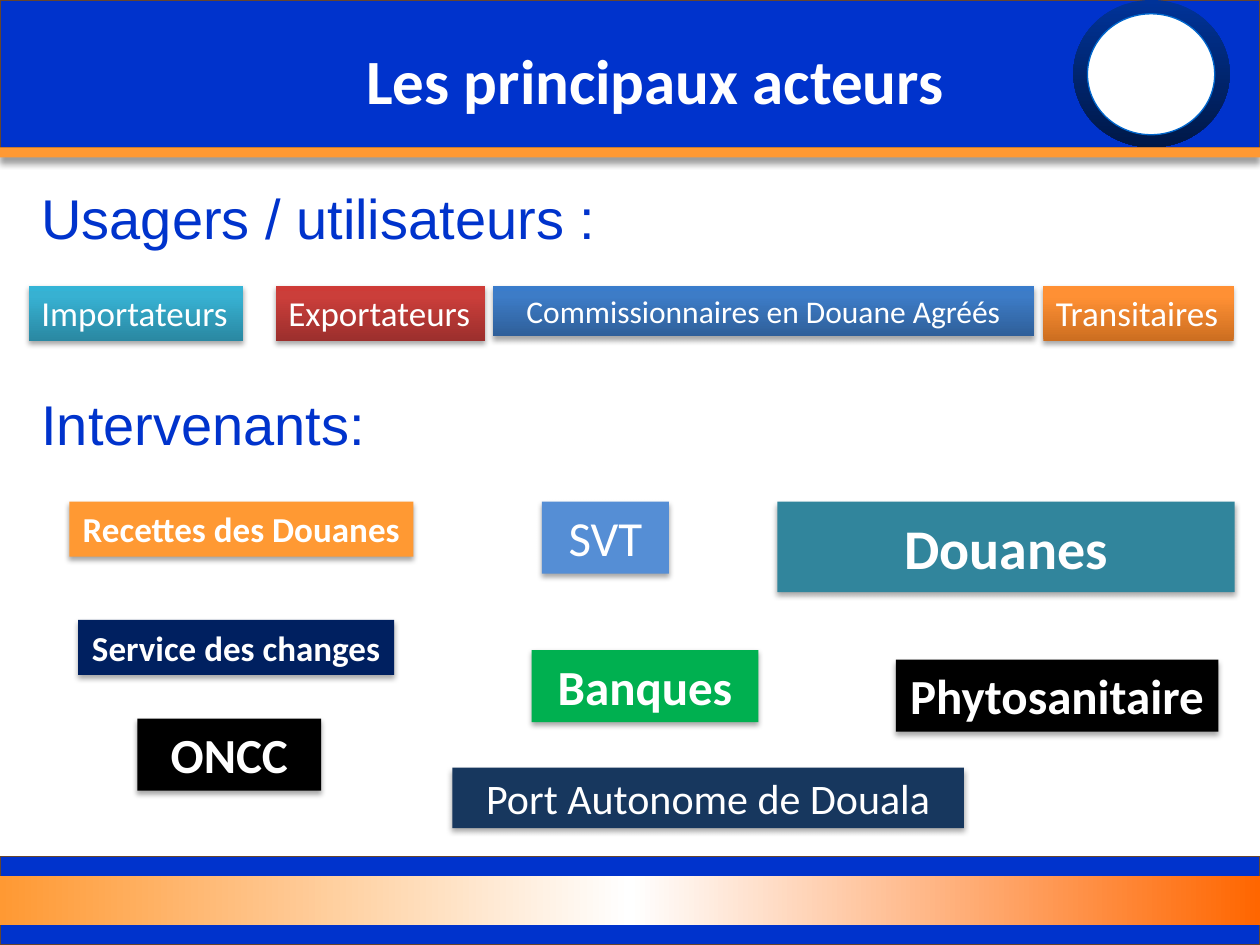
import copy
from dataclasses import dataclass

import pptx
import pptx.dml.color
import pptx.enum.shapes
import pptx.enum.text
import pptx.oxml
import pptx.oxml.ns
import pptx.util

Pt = pptx.util.Pt
RGB = pptx.dml.color.RGBColor.from_string
SHAPES = pptx.enum.shapes.MSO_SHAPE
ALIGN = pptx.enum.text.PP_ALIGN
ANCHOR = pptx.enum.text.MSO_ANCHOR
AUTOSIZE = pptx.enum.text.MSO_AUTO_SIZE


@dataclass(frozen=True)
class Theme:
    blue: str = "0033CC"
    orange: str = "FF9933"
    white: str = "FFFFFF"
    black: str = "000000"
    brown: str = "67452D"
    ring_edge: str = "0066CC"
    sky: str = "558ED5"
    green: str = "00B050"
    navy: str = "17375E"
    teal: str = "31859C"
    midnight: str = "002060"
    ribbon: tuple = ((0, "FF9933"), (50, "FFFFFF"), (100, "FF6600"))
    ring: tuple = ((0, "003399"), (100, "001847"))
    turquoise_fade: tuple = ((0, "2A88A2"), (80, "37B1D2"), (100, "34B4D6"))
    red_fade: tuple = ((0, "9C2F2D"), (80, "CB3E3A"), (100, "CE3B37"))
    blue_fade: tuple = ((0, "2F5F99"), (80, "3D7CC7"), (100, "3A7CCB"))
    orange_fade: tuple = ((0, "CC6E20"), (80, "FF9034"), (100, "FF9136"))
    body_font: str = "Calibri"
    heading_font: str = "Arial"
    title_size: int = 36
    heading_size: int = 32
    huge: int = 32
    large: int = 28
    medium: int = 24
    small: int = 20
    tiny: int = 18
    label_shadow: tuple = (35, 3.1, 1.8)
    header_shadow: tuple = (40, 4, 3)


class Deck:
    def __init__(self, theme, width, height):
        self.theme = theme
        self.presentation = pptx.Presentation()
        self.presentation.slide_width = Pt(width)
        self.presentation.slide_height = Pt(height)
        self.slide = self.presentation.slides.add_slide(self.presentation.slide_layouts[5])

    def fade(self, shape, stops, angle):
        shape.fill.gradient()
        stop_list = shape._element.spPr.find(".//" + pptx.oxml.ns.qn("a:gsLst"))
        for _ in stops[2:]:
            stop_list.append(copy.deepcopy(stop_list[0]))
        for stop, (position, color) in zip(shape.fill.gradient_stops, stops):
            stop.color.rgb = RGB(color)
            stop.position = position / 100
        shape.fill.gradient_angle = angle

    def shade(self, shape, opacity, blur, distance):
        effects = shape._element.spPr.find(pptx.oxml.ns.qn("a:effectLst"))
        effects.append(pptx.oxml.parse_xml(
            f'<a:outerShdw {pptx.oxml.ns.nsdecls("a")} blurRad="{Pt(blur)}" '
            f'dist="{Pt(distance)}" dir="5400000" rotWithShape="0">'
            f'<a:srgbClr val="{self.theme.black}"><a:alpha val="{opacity * 1000}"/>'
            '</a:srgbClr></a:outerShdw>'))

    def panel(self, left, top, width, height, fill, line=None, angle=0,
              shadow=None, kind=SHAPES.RECTANGLE, parent=None):
        shapes = (parent or self.slide).shapes
        shape = shapes.add_shape(kind, Pt(left), Pt(top), Pt(width), Pt(height))
        if isinstance(fill, str):
            shape.fill.solid()
            shape.fill.fore_color.rgb = RGB(fill)
        else:
            self.fade(shape, fill, angle)
        if line:
            shape.line.color.rgb = RGB(line)
            shape.line.width = Pt(0.75)
        else:
            shape.line.fill.background()
        shape.shadow.inherit = False
        if shadow:
            self.shade(shape, *shadow)
        return shape

    def set_text(self, shape, text, size, font, color, bold=False,
                 align=ALIGN.CENTER, anchor=ANCHOR.MIDDLE, wrap=True, grow=False):
        frame = shape.text_frame
        frame.text = text
        frame.word_wrap = wrap
        frame.vertical_anchor = anchor
        frame.auto_size = AUTOSIZE.SHAPE_TO_FIT_TEXT if grow else AUTOSIZE.NONE
        paragraph = frame.paragraphs[0]
        paragraph.alignment = align
        paragraph.font.size = Pt(size)
        paragraph.font.name = font
        paragraph.font.bold = bold
        paragraph.font.color.rgb = RGB(color)

    def title(self, text, left, top, width, height):
        title = self.slide.shapes.title
        self.slide.shapes._spTree.append(title._element)
        title.left, title.top = Pt(left), Pt(top)
        title.width, title.height = Pt(width), Pt(height)
        self.set_text(title, text, self.theme.title_size, self.theme.body_font,
                      self.theme.white, bold=True)

    def heading(self, text, left, top, width, height):
        heading = self.slide.shapes.add_textbox(Pt(left), Pt(top), Pt(width), Pt(height))
        self.set_text(heading, text, self.theme.heading_size, self.theme.heading_font,
                      self.theme.blue, align=ALIGN.LEFT)

    def label(self, text, left, top, width, fill, size, bold=False,
              wrap=False, align=ALIGN.CENTER):
        theme = self.theme
        heights = {theme.huge: 51.8, theme.large: 41.2, theme.medium: 34.6,
                   theme.small: 31.5, theme.tiny: 29.1}
        grow = size not in (theme.huge, theme.medium)
        label = self.panel(left, top, width, heights[size], fill, angle=90,
                           shadow=theme.label_shadow)
        self.set_text(label, text, size, theme.body_font, theme.white, bold, align,
                      ANCHOR.TOP if grow else ANCHOR.MIDDLE, wrap, grow)


def main():
    theme = Theme()
    width, height = 720, 540
    deck = Deck(theme, width, height)

    deck.panel(0, 489.6, width, 50.4, theme.blue, theme.brown)
    deck.panel(0, 500.4, width, 28.1, theme.ribbon)
    deck.panel(0, 0, width, 84.2, theme.blue, theme.brown)
    emblem = deck.slide.shapes.add_group_shape()
    deck.panel(613.4, 0, 89.3, 84.2, theme.ring, angle=270,
               kind=SHAPES.OVAL, parent=emblem)
    deck.panel(621.4, 7.9, 72.7, 69.1, theme.white, theme.ring_edge,
               kind=SHAPES.OVAL, parent=emblem)
    deck.panel(0, 84.2, width, 5.8, theme.orange, shadow=theme.header_shadow)
    deck.title("Les principaux acteurs", 129.6, 11.5, 489.6, 67.7)

    deck.heading("Usagers / utilisateurs :", 16.6, 101.5, 393.8, 44.6)
    users_top = 163.2
    for text, left, label_width, fill in (
        ("Importateurs", 16.6, 122.4, theme.turquoise_fade),
        ("Exportateurs", 157.7, 119.5, theme.red_fade),
        ("Transitaires", 596.2, 108.7, theme.orange_fade),
    ):
        deck.label(text, left, users_top, label_width, fill, theme.small, align=ALIGN.LEFT)
    deck.label("Commissionnaires en Douane Agréés", 281.5, users_top, 309.6,
               theme.blue_fade, theme.tiny, wrap=True)

    deck.heading("Intervenants:", 16.6, 219.6, 393.8, 44.6)
    first_row = 286.6
    for text, left, top, label_width, fill, size, bold, wrap in (
        ("SVT", 309.6, first_row, 72.7, theme.sky, theme.large, False, True),
        ("Recettes des Douanes", 39.6, first_row, 196.6, theme.orange, theme.small, True, True),
        ("Phytosanitaire", 511.9, 376.9, 184.3, theme.black, theme.large, True, False),
        ("Banques", 303.8, 371.5, 129.6, theme.green, theme.large, True, True),
        ("Port Autonome de Douala", 258.5, 438.6, 292.3, theme.navy, theme.medium, False, False),
        ("Douanes", 444.2, first_row, 261.4, theme.teal, theme.huge, True, False),
        ("ONCC", 78.5, 410.6, 105.1, theme.black, theme.large, True, True),
        ("Service des changes", 44.6, 354.2, 180.7, theme.midnight, theme.small, True, False),
    ):
        deck.label(text, left, top, label_width, fill, size, bold, wrap)

    deck.presentation.save("out.pptx")


if __name__ == "__main__":
    main()
